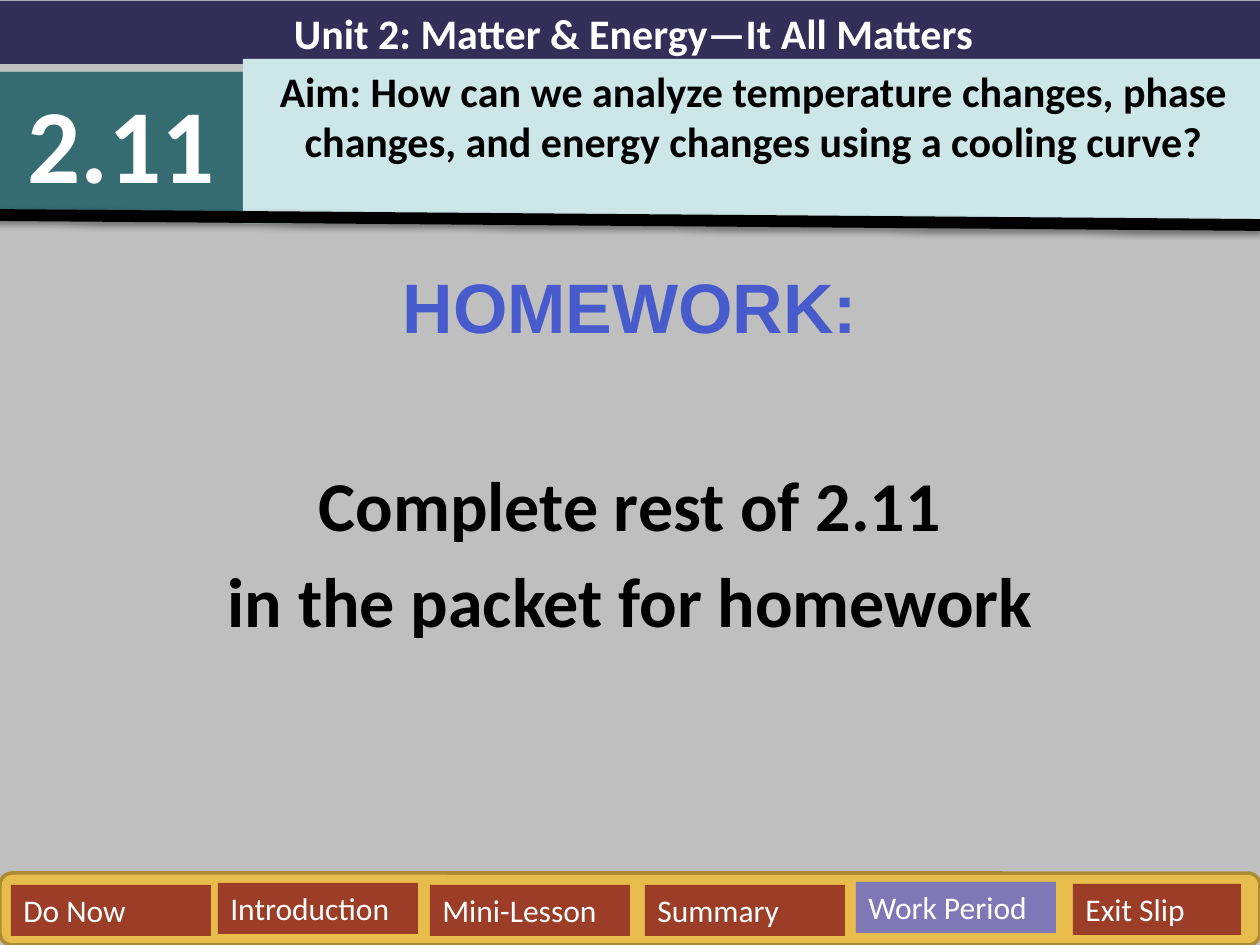
import pptx
import pptx.dml.color
import pptx.enum.shapes
import pptx.enum.text
import pptx.oxml
import pptx.util

SCALE = pptx.util.Inches(1) / 126
ALIGN = pptx.enum.text.PP_ALIGN
SHAPES = pptx.enum.shapes.MSO_SHAPE
SHADOW = (
    '<a:effectLst xmlns:a="http://schemas.openxmlformats.org/drawingml/2006/main">'
    '<a:outerShdw blurRad="39370" dist="20320" dir="5400000" rotWithShape="0">'
    '<a:srgbClr val="000000"><a:alpha val="38000"/></a:srgbClr>'
    '</a:outerShdw></a:effectLst>'
)


def px(length):
    """Turn whole pixels into EMU."""
    return pptx.util.Emu(round(length * SCALE))


def paint(color_format, value):
    """Set a colour from a hex string."""
    color_format.rgb = pptx.dml.color.RGBColor.from_string(value)


def fill(shape, value):
    """Give a shape a solid fill."""
    shape.fill.solid()
    paint(shape.fill.fore_color, value)


def place(shape, box):
    """Move and size a shape to a pixel box."""
    shape.left, shape.top, shape.width, shape.height = map(px, box)


def format_paragraph(paragraph, size, color, bold=True, align=ALIGN.CENTER, font="Calibri"):
    """Format a paragraph and its runs."""
    paragraph.alignment = align
    for run in paragraph.runs:
        run.font.size = pptx.util.Pt(size)
        run.font.bold = bold
        run.font.name = font
        paint(run.font.color, color)


def write(shape, text, size, color, **style):
    """Write wrapped text from the top of a shape."""
    frame = shape.text_frame
    frame.text = text
    frame.word_wrap = True
    frame.auto_size = pptx.enum.text.MSO_AUTO_SIZE.NONE
    frame.vertical_anchor = pptx.enum.text.MSO_ANCHOR.TOP
    for paragraph in frame.paragraphs:
        format_paragraph(paragraph, size, color, **style)


def add_panel(slide, box, color, kind=SHAPES.RECTANGLE):
    """Add a filled shape without outline or shadow."""
    shape = slide.shapes.add_shape(kind, *map(px, box))
    shape.shadow.inherit = False
    fill(shape, color)
    shape.line.fill.background()
    return shape


def build_body(slide, box):
    """Fill the subtitle with the homework message."""
    body = slide.placeholders[1]
    place(body, box)
    write(body, "HOMEWORK:\nComplete rest of 2.11\nin the packet for homework", 40, "000000")
    paragraphs = body.text_frame.paragraphs
    format_paragraph(paragraphs[0], 40, "475BCD", font="Arial")
    for paragraph, space in zip(paragraphs, (3, 65, 7)):
        paragraph.space_before = pptx.util.Pt(space)


def build_header(slide, box):
    """Build the unit title, lesson number, aim and rule."""
    left, top, width, height = box
    title = slide.shapes.title
    place(title, (left, top, width + 7, 63))
    fill(title, "342F59")
    write(title, "Unit 2: Matter & Energy—It All Matters", 24, "FFFFFF")
    number = add_panel(slide, (left, top + 71, 243, 140), "346C71")
    write(number, "2.11", 60, "FFFFFF")
    aim = add_panel(slide, (left + 243, top + 58, width - 239, 165), "CDE6E8")
    write(aim, "Aim: How can we analyze temperature changes, phase changes, "
          "and energy changes using a cooling curve?", 24, "000000")
    rule = slide.shapes.add_connector(
        pptx.enum.shapes.MSO_CONNECTOR.STRAIGHT,
        px(left - 6), px(top + height - 10), px(left + width), px(top + height))
    paint(rule.line.color, "000000")
    rule.line.width = pptx.util.Pt(6.75)
    rule._element.spPr.append(pptx.oxml.parse_xml(SHADOW))


def build_navigation(slide, box):
    """Build the bar of lesson stages with the current one highlighted."""
    left, top = box[:2]
    bar = add_panel(slide, box, "E8BC4A", SHAPES.ROUNDED_RECTANGLE)
    paint(bar.line.color, "AC8B37")
    bar.line.width = pptx.util.Pt(2)
    tabs = [
        ("Do Now", 11, 12, 200, "9C3D28"),
        ("Introduction", 218, 10, 200, "9C3D28"),
        ("Mini-Lesson", 430, 12, 200, "9C3D28"),
        ("Summary", 645, 12, 200, "9C3D28"),
        ("Work Period", 856, 9, 200, "7E78B7"),
        ("Exit Slip", 1073, 11, 168, "9C3D28"),
    ]
    for label, across, down, width, color in tabs:
        tab = add_panel(slide, (left + across, top + down, width, 51), color)
        write(tab, label, 18, "FFFFFF", bold=False, align=ALIGN.LEFT)


def main():
    """Create the homework slide and save it."""
    presentation = pptx.Presentation()
    presentation.slide_width, presentation.slide_height = px(1260), px(945)
    slide = presentation.slides.add_slide(presentation.slide_layouts[0])
    fill(slide.background, "BFBFBF")
    build_body(slide, (0, 257, 1260, 688))
    build_header(slide, (0, 1, 1260, 224))
    build_navigation(slide, (0, 873, 1260, 72))
    presentation.save("out.pptx")


if __name__ == "__main__":
    main()
